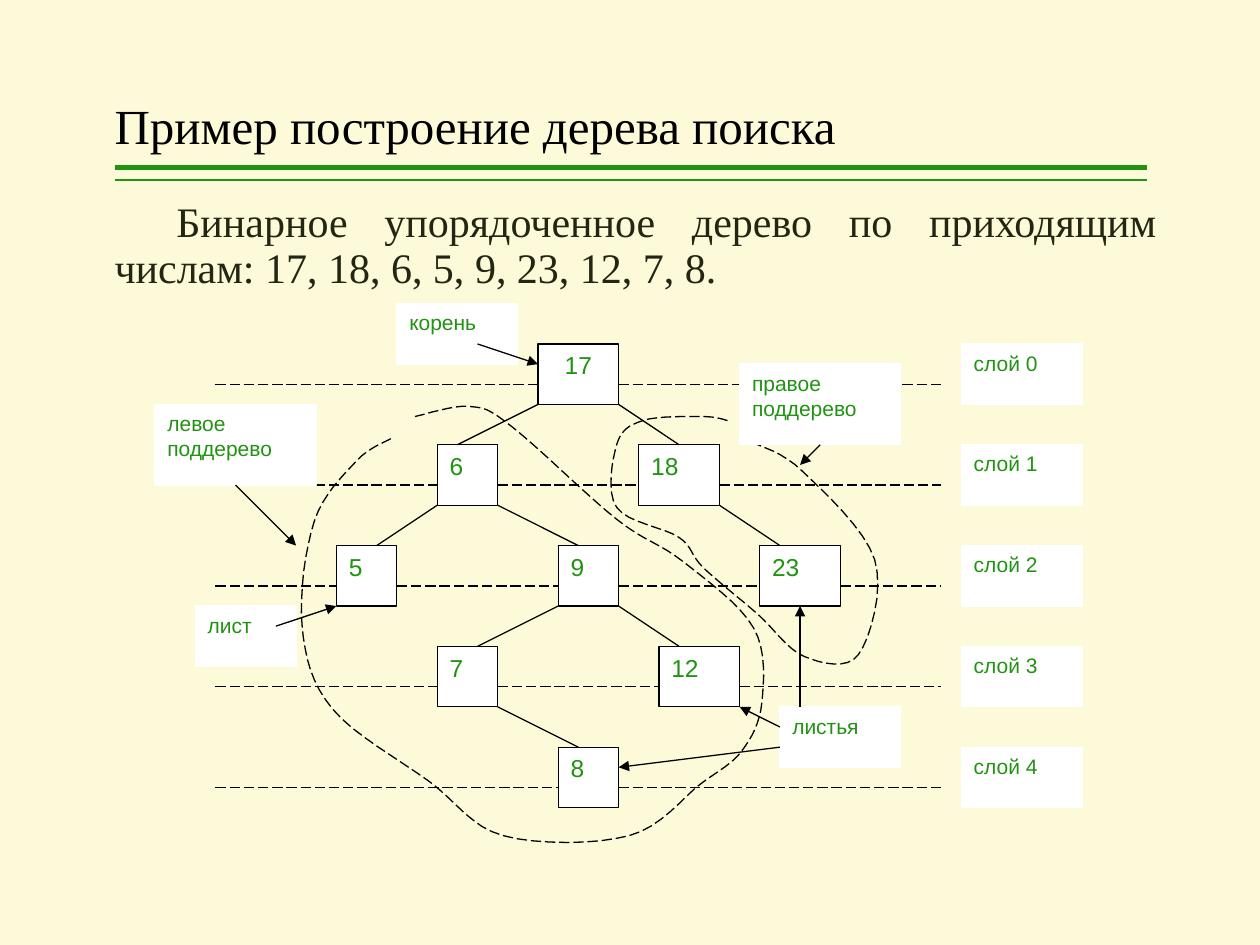
from itertools import pairwise

from lxml import etree
from pptx import Presentation
from pptx.dml.color import RGBColor
from pptx.enum import dml, shapes, text
from pptx.oxml.ns import qn
from pptx.util import Inches, Pt

COLORS = {"background": "FDFAD9", "green": "209311", "body": "222613",
          "black": "000000", "white": "FFFFFF"}
color = {name: RGBColor.from_string(value) for name, value in COLORS.items()}

# The diagram lies on a square grid; its origin is the left edge of node 5
# and the top edge of the root. Columns and rows below count grid units.
ORIGIN_X, ORIGIN_Y, UNIT = Inches(2.67), Inches(2.73), Inches(0.16)
LAYER_COUNT, LAYER_STEP = 5, 5
NODE_HEIGHT = 3
DASH_OFFSET = 2  # from the top of a layer to its dashed line
DASH_START, DASH_END = -6, 30

presentation = Presentation()
presentation.slide_width, presentation.slide_height = Inches(10), Inches(7.5)
slide = presentation.slides.add_slide(presentation.slide_layouts[5])
slide.background.fill.solid()
slide.background.fill.fore_color.rgb = color["background"]


def add_line(start, end, width=0.75, line_color="black", dashed=False, arrow=False):
    """Draw a line between two (column, row) grid points."""
    ends = [origin + round(UNIT * position) for point in (start, end)
            for origin, position in zip((ORIGIN_X, ORIGIN_Y), point)]
    connector = slide.shapes.add_connector(shapes.MSO_CONNECTOR.STRAIGHT, *ends)
    connector.line.color.rgb = color[line_color]
    connector.line.width = Pt(width)
    if dashed:
        connector.line.dash_style = dml.MSO_LINE.LONG_DASH
    properties = connector.element.spPr
    if arrow:
        etree.SubElement(properties.find(qn("a:ln")), qn("a:tailEnd"), type="triangle")
    etree.SubElement(properties, qn("a:effectLst"))
    return connector


def add_box(column, row, width, height, content, size, outline):
    """Draw a white box with green text, placed and sized in grid units."""
    box = slide.shapes.add_shape(
        shapes.MSO_SHAPE.RECTANGLE, ORIGIN_X + UNIT * column, ORIGIN_Y + UNIT * row,
        UNIT * width, UNIT * height)
    box.shadow.inherit = False
    box.fill.solid()
    box.fill.fore_color.rgb = color["white"]
    box.line.color.rgb = color[outline]
    box.line.width = Pt(0.75)
    box.text_frame.text = content
    box.text_frame.vertical_anchor = text.MSO_ANCHOR.TOP
    for paragraph in box.text_frame.paragraphs:
        paragraph.alignment = text.PP_ALIGN.LEFT
        font = paragraph.runs[0].font
        font.name, font.size, font.color.rgb = "Arial", Pt(size), color["green"]
    return box


# Title and introduction
title = slide.shapes.title
title.left, title.top, title.width, title.height = map(Inches, (0.91, 0.08, 8.19, 1.2))
body = slide.shapes.add_textbox(*map(Inches, (0.91, 1.55, 8.27, 1.1)))
headings = [
    (title, "Пример построение дерева поиска", 28, "black",
     text.PP_ALIGN.LEFT, text.MSO_ANCHOR.BOTTOM),
    (body, "Бинарное упорядоченное дерево по приходящим числам: "
     "17, 18, 6, 5, 9, 23, 12, 7, 8.", 24, "body",
     text.PP_ALIGN.JUSTIFY, text.MSO_ANCHOR.TOP),
]
for shape, content, size, font_color, alignment, anchor in headings:
    frame = shape.text_frame
    frame.text = content
    frame.word_wrap = True
    frame.auto_size = text.MSO_AUTO_SIZE.NONE
    frame.vertical_anchor = anchor
    frame.margin_left = frame.margin_right = 0
    paragraph = frame.paragraphs[0]
    paragraph.alignment = alignment
    paragraph.line_spacing = 0.9
    font = paragraph.runs[0].font
    font.name, font.size, font.color.rgb = "Times New Roman", Pt(size), color[font_color]
body_paragraph = body.text_frame.paragraphs[0]
body_paragraph.space_before = Pt(6)
body_paragraph._p.get_or_add_pPr().set("indent", str(Inches(0.49)))

for row, width in [(-8.75, 3), (-8.12, 1)]:
    add_line((-11, row), (40.2, row), width, "green")

# Tree: value -> (parent, column, distance from the left side to the incoming edge)
tree = {
    17: (None, 10, 0),
    6: (17, 5, 1),
    18: (17, 15, 2),
    5: (6, 0, 2),
    9: (6, 11, 1),
    23: (18, 21, 1),
    7: (9, 5, 2),
    12: (9, 16, 1),
    8: (7, 11, 1),
}
node_boxes = {}
layer_of, left_of, right_of = {}, {}, {}
for value, (parent, column, edge_offset) in tree.items():
    width = 4 if value > 9 else 3  # two digits need a wider box
    layer_of[value] = layer_of[parent] + 1 if parent else 0
    left_of[value], right_of[value] = column, column + width
    top = layer_of[value] * LAYER_STEP
    node_boxes[value] = add_box(column, top, width, NODE_HEIGHT, str(value), 14, "black")
    if parent:
        # Smaller values hang from the parent's left corner, larger from its right
        corner = left_of[parent] if value < parent else right_of[parent]
        parent_bottom = layer_of[parent] * LAYER_STEP + NODE_HEIGHT
        add_line((corner, parent_bottom), (column + edge_offset, top))
node_boxes[17].text_frame.paragraphs[0].alignment = text.PP_ALIGN.CENTER

# Dashed layer lines fill the gaps between the nodes of each layer
for layer in range(LAYER_COUNT):
    row = layer * LAYER_STEP + DASH_OFFSET
    members = sorted((value for value in tree if layer_of[value] == layer))
    gap_starts = [DASH_START] + [right_of[value] for value in members]
    gap_ends = [left_of[value] for value in members] + [DASH_END]
    for gap_start, gap_end in zip(gap_starts, gap_ends):
        add_line((gap_start, row), (gap_end, row), dashed=True)

# Subtree outlines: a smooth Catmull-Rom curve through a few waypoints
subtree_waypoints = {
    "left": [(2.7, 4.7), (1, 5.8), (-1.1, 8.8), (-1.7, 14), (-0.2, 18.1), (4.6, 21.7),
             (8.3, 24.4), (14.5, 24.4), (18.1, 21.8), (20.1, 20.2), (21.1, 17.8),
             (20.7, 14.1), (17.2, 10.8), (13.9, 8.7), (8.7, 4.1), (6.6, 3.1), (3.9, 3.6)],
    "right": [(19.4, 3.8), (18.2, 3.6), (15.2, 3.8), (13.9, 5), (13.9, 8.1), (17, 9.6),
              (18.2, 11.1), (20.9, 13.4), (23.2, 15.5), (25.9, 15.4), (26.7, 10.7),
              (23.1, 6.3), (20.7, 4.9)],
}
STEPS = 8  # straight pieces between two waypoints
PRECISION = 100  # freeform points are whole hundredths of a grid unit
for waypoints in subtree_waypoints.values():
    padded = [waypoints[0], *waypoints, waypoints[-1]]
    curve = []
    for before, start, end, after in zip(padded, padded[1:], padded[2:], padded[3:]):
        for step in range(1, STEPS + 1):
            t = step / STEPS
            curve.append([
                PRECISION * (b + (c - a) * t / 2 + (2 * a - 5 * b + 4 * c - d) * t**2 / 2
                             + (3 * b - a - 3 * c + d) * t**3 / 2)
                for a, b, c, d in zip(before, start, end, after)])
    first_x, first_y = waypoints[0]
    builder = slide.shapes.build_freeform(
        first_x * PRECISION, first_y * PRECISION, scale=UNIT / PRECISION)
    builder.add_line_segments(curve, close=False)
    outline = builder.convert_to_shape(ORIGIN_X, ORIGIN_Y)
    outline.shadow.inherit = False
    outline.fill.background()
    outline.line.color.rgb = color["black"]
    outline.line.width = Pt(0.75)
    outline.line.dash_style = dml.MSO_LINE.LONG_DASH

# Labels: name -> (text, column, row, width, height)
labels = {
    "root": ("корень", 3, -2, 6, 3),
    "leaves": ("листья", 22, 18, 6, 3),
    "left subtree": ("левое\nподдерево", -9, 3, 8, 4),
    "right subtree": ("правое\nподдерево", 20, 1, 8, 4),
    "leaf": ("лист", -7, 13, 5, 3),
}
for layer in range(LAYER_COUNT):
    labels[f"layer {layer}"] = (f"слой {layer}", 31, layer * LAYER_STEP, 6, 3)
label_boxes = {name: add_box(*place, content, 12, "white")
               for name, (content, *place) in labels.items()}

# Arrows: start, end, box joined at the start, box joined at the end
BOTTOM = 2
arrows = [
    ((7, 0), (10, 1), None, None),  # root to 17
    ((22, 20), (14, 21), None, None),  # leaves to 8
    ((22, 19), (20, 18), None, None),  # leaves to 12
    ((23, 18), (23, 13), None, node_boxes[23]),  # leaves to 23
    ((-3, 14), (0, 13), None, None),  # leaf to 5
    ((-5, 7), (-2, 10), label_boxes["left subtree"], None),
    ((24, 5), (23, 6), label_boxes["right subtree"], None),
]
for start, end, start_box, end_box in arrows:
    connector = add_line(start, end, arrow=True)
    if start_box:
        connector.begin_connect(start_box, BOTTOM)
    if end_box:
        connector.end_connect(end_box, BOTTOM)

presentation.save("out.pptx")
